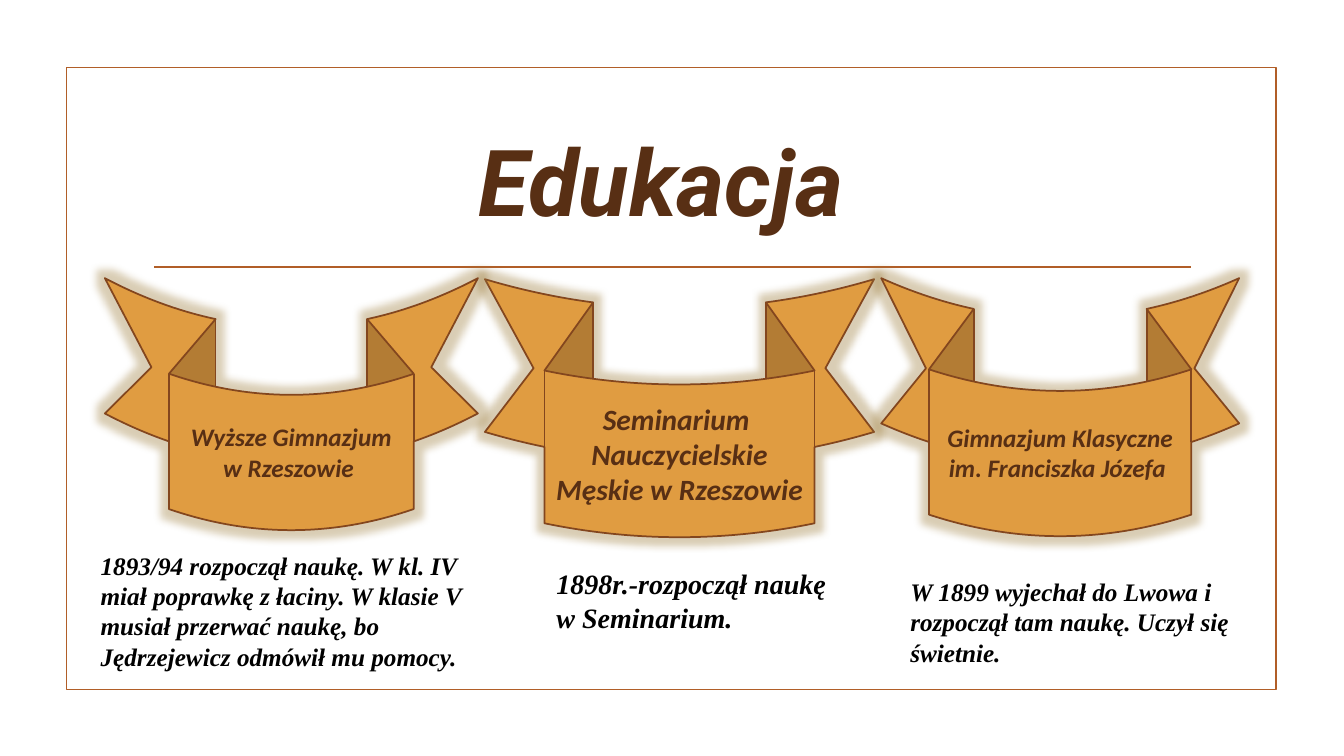
from dataclasses import dataclass

import pptx
import pptx.dml.color
import pptx.enum.shapes
import pptx.enum.text
import pptx.oxml
import pptx.oxml.ns
import pptx.shapes.autoshape
import pptx.slide
import pptx.text.text
import pptx.util
from pptx.util import Inches

RUST = pptx.dml.color.RGBColor(0xB1, 0x5E, 0x28)
RIBBON_FILL = pptx.dml.color.RGBColor(0xE0, 0x9C, 0x41)
RIBBON_EDGE = pptx.dml.color.RGBColor(0x83, 0x46, 0x1E)
DARK_BROWN = pptx.dml.color.RGBColor(0x58, 0x2F, 0x14)
BLACK = pptx.dml.color.RGBColor(0x00, 0x00, 0x00)
GLOW = pptx.dml.color.RGBColor(0xA2, 0x84, 0x46)
LINE_WIDTH = pptx.util.Pt(1.25)
GLOW_RADIUS = pptx.util.Pt(11)

CENTER = pptx.enum.text.PP_ALIGN.CENTER
LEFT = pptx.enum.text.PP_ALIGN.LEFT
MIDDLE = pptx.enum.text.MSO_ANCHOR.MIDDLE
TOP = pptx.enum.text.MSO_ANCHOR.TOP
NO_AUTOFIT = pptx.enum.text.MSO_AUTO_SIZE.NONE
GROW = pptx.enum.text.MSO_AUTO_SIZE.SHAPE_TO_FIT_TEXT

Box = tuple[float, float, float, float]


@dataclass(frozen=True)
class TextStyle:
    font: str
    color: pptx.dml.color.RGBColor
    align: pptx.enum.text.PP_ALIGN
    anchor: pptx.enum.text.MSO_ANCHOR
    auto_size: pptx.enum.text.MSO_AUTO_SIZE


TITLE_STYLE = TextStyle("Roboto", DARK_BROWN, CENTER, MIDDLE, NO_AUTOFIT)
SCHOOL_STYLE = TextStyle("Calibri", DARK_BROWN, CENTER, MIDDLE, NO_AUTOFIT)
STORY_STYLE = TextStyle("Times New Roman", BLACK, LEFT, TOP, GROW)


@dataclass(frozen=True)
class Stage:
    """A school on a ribbon, with its story below."""
    school: tuple[str, ...]
    school_size: int
    ribbon_box: Box
    ribbon_adjustments: tuple[float, float, float]
    story: str
    story_size: int
    story_box: Box


STAGES = [
    Stage(("Seminarium ", "Nauczycielskie Męskie w Rzeszowie "), 21,
          (4.81, 2.77, 3.86, 2.56), (0.408, 0.694, 0.1),
          "1898r.-rozpoczął naukę w Seminarium.", 20,
          (5.42, 5.57, 3.01, 0.77)),
    Stage(("Gimnazjum Klasyczne im. Franciszka Józefa ",), 18,
          (8.74, 2.76, 3.55, 2.56), (0.437, 0.733, 0.125),
          "W 1899 wyjechał do Lwowa i rozpoczął tam naukę. Uczył się świetnie.", 18,
          (8.93, 5.67, 3.5, 1.01)),
    Stage(("Wyższe Gimnazjum w Rzeszowie ",), 18,
          (1.04, 2.76, 3.7, 2.5), (0.463, 0.656, 0.125),
          "1893/94 rozpoczął naukę. W kl. IV miał poprawkę z łaciny. W klasie V "
          "musiał przerwać naukę, bo Jędrzejewicz odmówił mu pomocy.", 18,
          (0.9, 5.41, 4.22, 1.62)),
]


def inches(box: Box) -> list[pptx.util.Length]:
    return [Inches(length) for length in box]


def write(frame: pptx.text.text.TextFrame, lines: tuple[str, ...],
          size: int, style: TextStyle) -> None:
    frame_format = {"word_wrap": True, "auto_size": style.auto_size,
                    "vertical_anchor": style.anchor}
    for name, value in frame_format.items():
        setattr(frame, name, value)
    font_format = {"name": style.font, "size": pptx.util.Pt(size),
                   "bold": True, "italic": True}
    frame.text = "\n".join(lines)
    for paragraph in frame.paragraphs:
        paragraph.alignment = style.align
        font = paragraph.runs[0].font
        for name, value in font_format.items():
            setattr(font, name, value)
        font.color.rgb = style.color


def add_glow(shape: pptx.shapes.autoshape.Shape) -> None:
    shape.shadow.inherit = False
    effects = shape._element.spPr.find(pptx.oxml.ns.qn("a:effectLst"))
    effects.append(pptx.oxml.parse_xml(
        f'<a:glow {pptx.oxml.ns.nsdecls("a")} rad="{int(GLOW_RADIUS)}">'
        f'<a:srgbClr val="{GLOW}"><a:alpha val="40000"/></a:srgbClr></a:glow>'))


def add_frame(slide: pptx.slide.Slide) -> None:
    frame = slide.shapes.add_shape(pptx.enum.shapes.MSO_SHAPE.RECTANGLE,
                                   *inches((0.66, 0.67, 12, 6.17)))
    frame.shadow.inherit = False
    frame.fill.background()
    rule = slide.shapes.add_connector(pptx.enum.shapes.MSO_CONNECTOR.STRAIGHT,
                                      *inches((1.53, 2.65, 11.81, 2.65)))
    rule._element.spPr.append(pptx.oxml.parse_xml(
        f'<a:effectLst {pptx.oxml.ns.nsdecls("a")}/>'))
    for outline in (frame.line, rule.line):
        outline.color.rgb = RUST
        outline.width = LINE_WIDTH


def add_ribbon(slide: pptx.slide.Slide, stage: Stage) -> None:
    ribbon = slide.shapes.add_shape(pptx.enum.shapes.MSO_SHAPE.CURVED_DOWN_RIBBON,
                                    *inches(stage.ribbon_box))
    for index, value in enumerate(stage.ribbon_adjustments):
        ribbon.adjustments[index] = value
    ribbon.fill.solid()
    ribbon.fill.fore_color.rgb = RIBBON_FILL
    ribbon.line.color.rgb = RIBBON_EDGE
    ribbon.line.width = LINE_WIDTH
    add_glow(ribbon)
    write(ribbon.text_frame, stage.school, stage.school_size, SCHOOL_STYLE)


def add_story(slide: pptx.slide.Slide, stage: Stage) -> None:
    story = slide.shapes.add_textbox(*inches(stage.story_box))
    write(story.text_frame, (stage.story,), stage.story_size, STORY_STYLE)


def place_title(slide: pptx.slide.Slide) -> None:
    title = slide.shapes.title
    title.left, title.top, title.width, title.height = inches((1.42, 1.07, 10.5, 1.43))
    write(title.text_frame, ("Edukacja ",), 66, TITLE_STYLE)


def main() -> None:
    deck = pptx.Presentation()
    deck.slide_width, deck.slide_height = Inches(13.33), Inches(7.5)
    slide = deck.slides.add_slide(deck.slide_layouts.get_by_name("Title Only"))
    place_title(slide)
    add_frame(slide)
    for stage in STAGES:
        add_ribbon(slide, stage)
    for stage in STAGES:
        add_story(slide, stage)
    deck.save("out.pptx")


if __name__ == "__main__":
    main()
